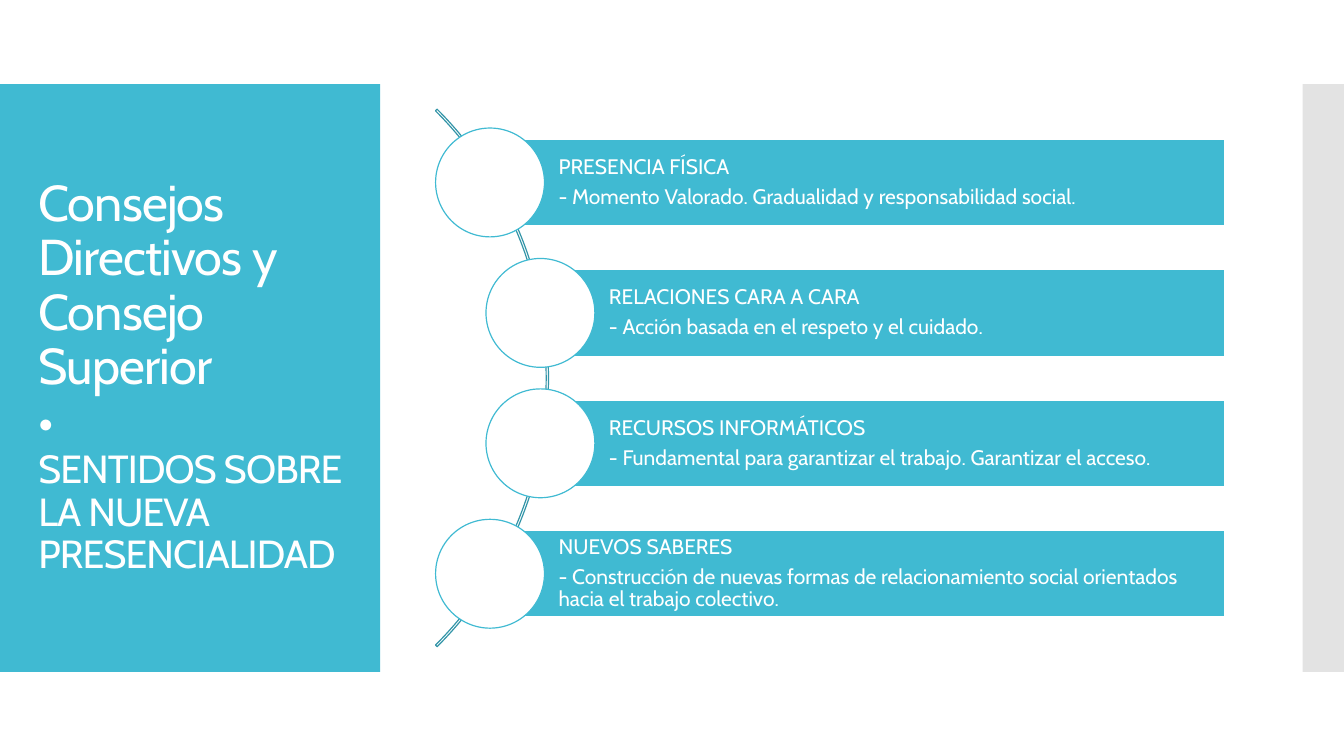
"""Build a slide with a title panel and four themes along an arc."""
from copy import deepcopy

from lxml.etree import SubElement
from pptx import Presentation
from pptx.dml.color import RGBColor
from pptx.enum.shapes import MSO_SHAPE
from pptx.enum.text import MSO_ANCHOR, MSO_AUTO_SIZE, PP_ALIGN
from pptx.oxml.ns import qn
from pptx.util import Inches, Pt

TEAL = RGBColor(0x40, 0xBA, 0xD2)
DARK_TEAL = RGBColor(0x33, 0x95, 0xA8)
GRAY = RGBColor(0xC8, 0xC8, 0xC8)
WHITE = RGBColor(0xFF, 0xFF, 0xFF)
FONT = "Cabin"
LINE_WIDTH = Pt(0.85)

WIDTH, HEIGHT = 13.33, 7.5
MIDDLE = HEIGHT / 2
PANEL_TOP, PANEL_HEIGHT = HEIGHT / 9, HEIGHT * 7 / 9
ARC_SIZE, ARC_LEFT = 7.54, -2.1
BAR_RIGHT, BAR_HEIGHT = 12.15, 0.86
CIRCLE_SIZE = 1.08
FIRST_CENTER, ROW_STEP = 1.81, 1.294
OUTER_CENTER, INNER_CENTER = 4.86, 5.36

THEMES = [
    (OUTER_CENTER, "PRESENCIA FÍSICA",
     "- Momento Valorado. Gradualidad y responsabilidad social."),
    (INNER_CENTER, "RELACIONES CARA A CARA",
     "- Acción basada en el respeto y el cuidado."),
    (INNER_CENTER, "RECURSOS INFORMÁTICOS",
     "- Fundamental para garantizar el trabajo. Garantizar el acceso."),
    (OUTER_CENTER, "NUEVOS SABERES",
     "- Construcción de nuevas formas de relacionamiento social orientados "
     "hacia el trabajo colectivo."),
]


def add_box(kind, left, top, width, height, fill=None, line=None):
    box = page.shapes.add_shape(
        kind, Inches(left), Inches(top), Inches(width), Inches(height))
    box.shadow.inherit = False
    if fill is None:
        box.fill.background()
    else:
        box.fill.solid()
        box.fill.fore_color.rgb = fill
    if line is None:
        box.line.fill.background()
    else:
        box.line.color.rgb = line
        box.line.width = LINE_WIDTH
    return box


def format_span(span, size):
    span.font.name = FONT
    span.font.size = Pt(size)
    span.font.color.rgb = WHITE


deck = Presentation()
deck.slide_width, deck.slide_height = Inches(WIDTH), Inches(HEIGHT)
page = deck.slides.add_slide(deck.slide_layouts[5])

add_box(MSO_SHAPE.RECTANGLE, 0, PANEL_TOP, 3.77, PANEL_HEIGHT, TEAL)
side_strip = add_box(
    MSO_SHAPE.RECTANGLE, 12.92, PANEL_TOP, WIDTH - 12.92, PANEL_HEIGHT, GRAY)
strip_color = side_strip.fill._xPr.find(qn("a:solidFill"))[0]
SubElement(strip_color, qn("a:alpha"), val="50000")

title = page.shapes.title
page.shapes._spTree.append(title._element)
title.left, title.top = Inches(0.28), Inches(1.23)
title.width, title.height = Inches(3.22), Inches(5.03)
frame = title.text_frame
frame.text = "Consejos Directivos y Consejo Superior\v•\vSENTIDOS SOBRE LA NUEVA PRESENCIALIDAD"
frame.word_wrap = True
frame.auto_size = MSO_AUTO_SIZE.NONE
frame.vertical_anchor = MSO_ANCHOR.MIDDLE
para = frame.paragraphs[0]
para.alignment = PP_ALIGN.LEFT
para.line_spacing = 0.9
for span, size in zip(para.runs, (36, 36, 28)):
    format_span(span, size)
    span.font._element.set("spc", "-60")
for line_break in para._p.findall(qn("a:br")):
    line_break.append(deepcopy(para.runs[0].font._element))

arc = add_box(MSO_SHAPE.BLOCK_ARC, ARC_LEFT, MIDDLE - ARC_SIZE / 2,
              ARC_SIZE, ARC_SIZE, line=DARK_TEAL)
for index, value in enumerate((189, 27, 0.003)):
    arc.adjustments[index] = value

for row, (center, heading, detail) in enumerate(THEMES):
    row_center = FIRST_CENTER + row * ROW_STEP
    bar = add_box(MSO_SHAPE.RECTANGLE, center, row_center - BAR_HEIGHT / 2,
                  BAR_RIGHT - center, BAR_HEIGHT, TEAL, WHITE)
    frame = bar.text_frame
    frame.text = f"{heading}\n{detail}"
    frame.word_wrap = True
    frame.vertical_anchor = MSO_ANCHOR.MIDDLE
    frame.margin_left = Inches(0.68)
    frame.margin_top = frame.margin_right = frame.margin_bottom = Inches(0.04)
    for para in frame.paragraphs:
        para.alignment = PP_ALIGN.LEFT
        para.line_spacing = 0.9
        para.space_after = Pt(5.25)
        format_span(para.runs[0], 15)
    add_box(MSO_SHAPE.OVAL, center - CIRCLE_SIZE / 2, row_center - CIRCLE_SIZE / 2,
            CIRCLE_SIZE, CIRCLE_SIZE, WHITE, TEAL)

deck.save("out.pptx")
